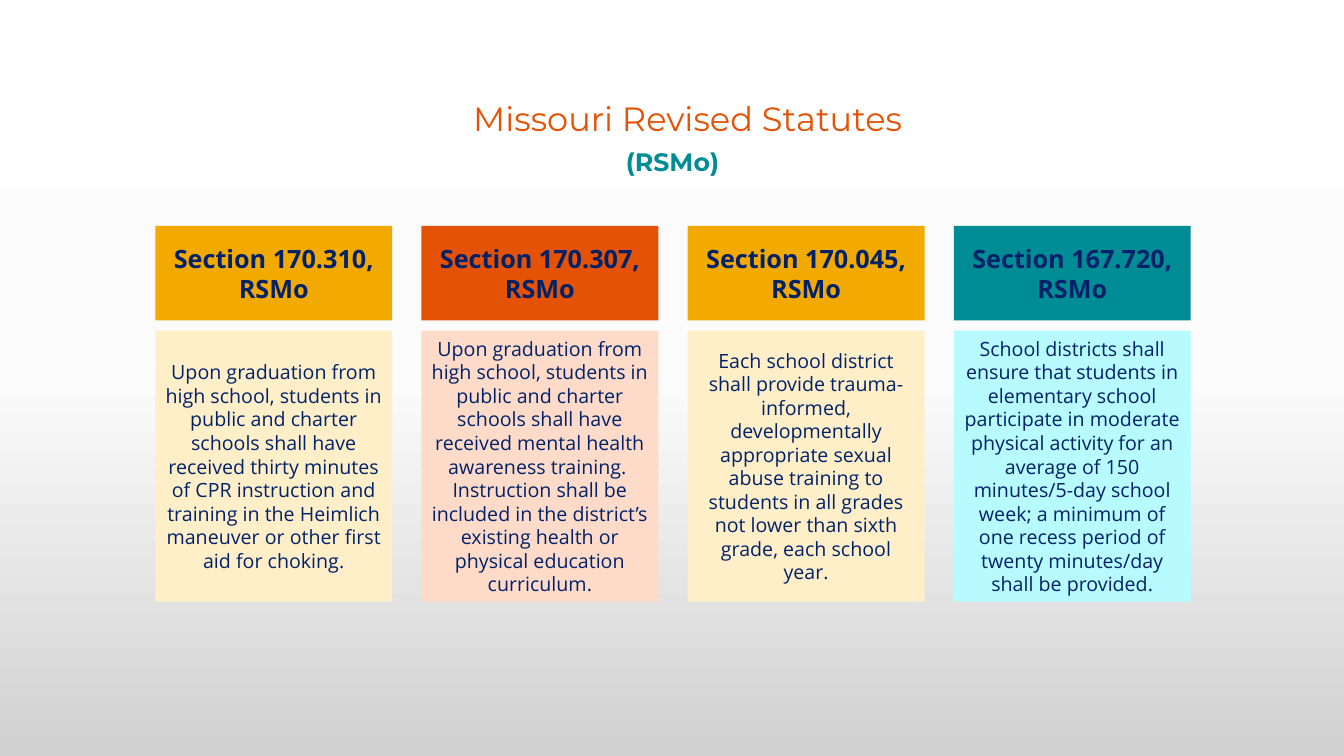
from copy import deepcopy

from pptx import Presentation
from pptx.dml.color import RGBColor
from pptx.enum.shapes import MSO_SHAPE
from pptx.enum.text import MSO_ANCHOR, PP_ALIGN
from pptx.oxml.ns import qn
from pptx.util import Inches, Pt

WHITE = RGBColor(0xFF, 0xFF, 0xFF)
NEAR_WHITE = RGBColor(0xFB, 0xFB, 0xFB)
GRAY = RGBColor(0xD1, 0xD1, 0xD1)
NAVY = RGBColor(0x01, 0x21, 0x69)
GOLD = RGBColor(0xF2, 0xA9, 0x00)
ORANGE = RGBColor(0xE3, 0x52, 0x05)
TEAL = RGBColor(0x00, 0x8C, 0x95)
PALE_GOLD = RGBColor(0xFF, 0xEF, 0xC9)
PALE_ORANGE = RGBColor(0xFE, 0xDB, 0xC9)
PALE_TEAL = RGBColor(0xB7, 0xFB, 0xFF)

presentation = Presentation()
presentation.slide_width = Inches(13.33)
presentation.slide_height = Inches(7.5)
slide = presentation.slides.add_slide(presentation.slide_layouts[6])


def add_text(text, left, top, width, height, size, color, font="Open Sans",
             bold=False, fill=None, anchor=MSO_ANCHOR.MIDDLE, line_spacing=1.0):
    box = [Inches(length) for length in (left, top, width, height)]
    if fill is None:
        shape = slide.shapes.add_textbox(*box)
    else:
        shape = slide.shapes.add_shape(MSO_SHAPE.RECTANGLE, *box)
        shape.shadow.inherit = False
        shape.fill.solid()
        shape.fill.fore_color.rgb = fill
        shape.line.fill.background()
    frame = shape.text_frame
    frame.word_wrap = True
    frame.vertical_anchor = anchor
    paragraph = frame.paragraphs[0]
    paragraph.alignment = PP_ALIGN.CENTER
    paragraph.line_spacing = line_spacing
    run = paragraph.add_run()
    run.text = text
    run.font.name = font
    run.font.size = Pt(size)
    run.font.bold = bold
    run.font.color.rgb = color


background = slide.background.fill
background.gradient()
background.gradient_angle = 270
stop_list = slide.element.find(".//" + qn("a:gsLst"))
stop_list.insert(1, deepcopy(stop_list[0]))
stops = zip(background.gradient_stops, (0, 0.5, 1), (WHITE, NEAR_WHITE, GRAY))
for stop, position, color in stops:
    stop.position = position
    stop.color.rgb = color

add_text("Missouri Revised Statutes", 1.07, 0.71, 11.5, 0.97, size=24,
         color=ORANGE, font="Montserrat", line_spacing=0.9)
add_text("(RSMo)", 1.67, 1.44, 10, 0.48, size=18, color=TEAL, bold=True,
         font="Montserrat", anchor=MSO_ANCHOR.TOP, line_spacing=0.9)

statutes = [
    ("170.310", GOLD, PALE_GOLD,
     "Upon graduation from high school, students in public and charter schools "
     "shall have received thirty minutes of CPR instruction and training in the "
     "Heimlich maneuver or other first aid for choking."),
    ("170.307", ORANGE, PALE_ORANGE,
     "Upon graduation from high school, students in public and charter schools "
     "shall have received mental health awareness training.  Instruction shall be "
     "included in the district’s existing health or physical education curriculum."),
    ("170.045", GOLD, PALE_GOLD,
     "Each school district shall provide trauma-informed, developmentally "
     "appropriate sexual abuse training to students in all grades not lower than "
     "sixth grade, each school year."),
    ("167.720", TEAL, PALE_TEAL,
     "School districts shall ensure that students in elementary school participate "
     "in moderate physical activity for an average of 150 minutes/5-day school "
     "week; a minimum of one recess period of twenty minutes/day shall be provided."),
]

for column, (section, header_fill, body_fill, requirement) in enumerate(statutes):
    left = 1.54 + 2.64 * column
    add_text(f"Section {section}, RSMo", left, 2.24, 2.35, 0.94, size=18,
             color=NAVY, bold=True, fill=header_fill)
    add_text(requirement, left, 3.28, 2.35, 2.69, size=14, color=NAVY, fill=body_fill)

presentation.save("out.pptx")
